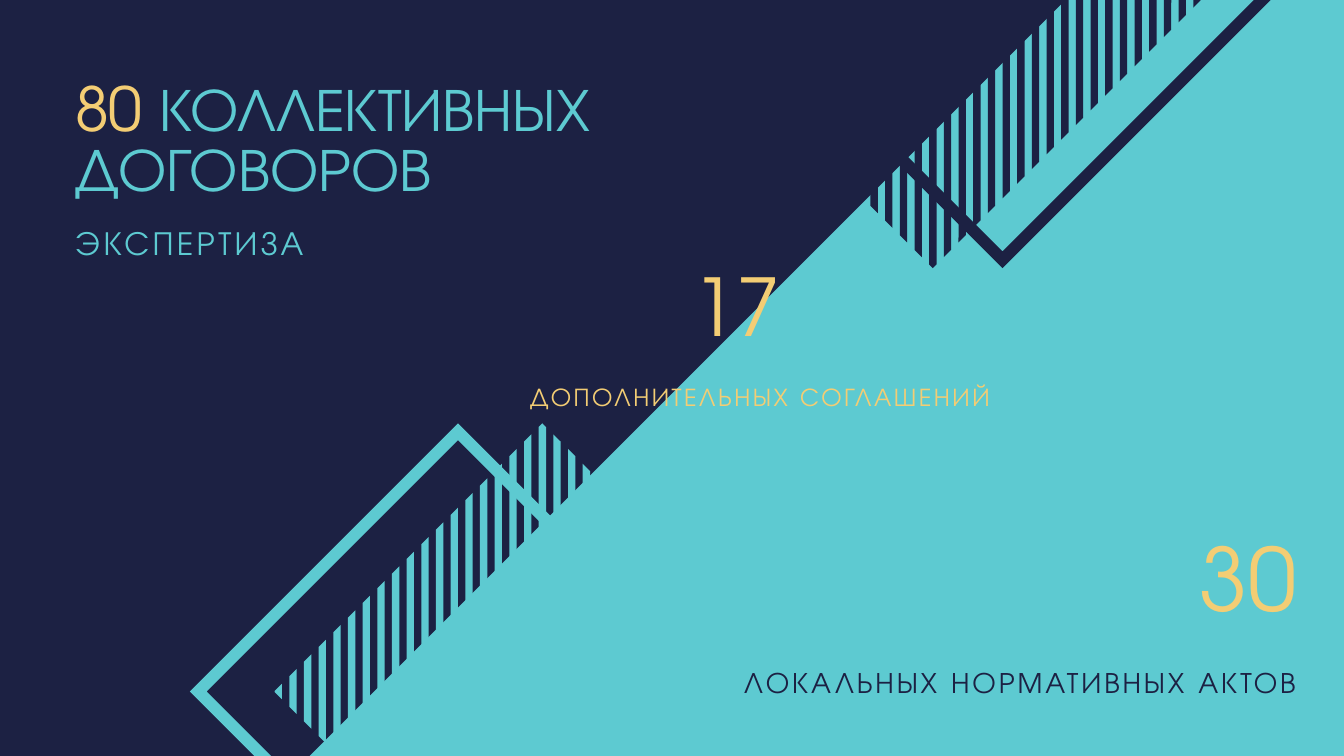
from dataclasses import dataclass
from math import sqrt

from pptx import Presentation
from pptx.dml.color import RGBColor
from pptx.enum.shapes import MSO_SHAPE
from pptx.enum.text import MSO_AUTO_SIZE, PP_ALIGN
from pptx.util import Pt


@dataclass(frozen=True)
class Theme:
    font: str = "TeX Gyre Adventor"
    navy: str = "1C2143"
    teal: str = "5DCAD1"
    gold: str = "F3CD74"
    title: float = 65
    sub: float = 36
    mid: float = 85.2
    mid_note: float = 27.4
    big: float = 93.1
    big_note: float = 31.6


THEME = Theme()
TILT = 315
HALF = 287.3    # centre to corner of a diamond
BAND = 18       # width of the frame, measured along the diagonal
STEP = 15.72    # from one stripe to the next
SIDE = 18       # stripes on each side of the middle one


def paint(shape, color):
    shape.fill.solid()
    shape.fill.fore_color.rgb = RGBColor.from_string(color)
    shape.line.fill.background()
    shape.shadow.inherit = False


def write(slide, box, runs, size, line, align=PP_ALIGN.LEFT, space=0):
    """Write one paragraph of (text, colour) runs; size, line and space in points."""
    shape = slide.shapes.add_textbox(*map(Pt, box))
    frame = shape.text_frame
    frame.margin_left = frame.margin_right = 0
    frame.margin_top = frame.margin_bottom = 0
    frame.word_wrap = True
    frame.auto_size = MSO_AUTO_SIZE.SHAPE_TO_FIT_TEXT
    para = frame.paragraphs[0]
    para.alignment = align
    para.line_spacing = Pt(line)
    for text, color in runs:
        run = para.add_run()
        run.text = text
        run.font.name = THEME.font
        run.font.size = Pt(size)
        run.font.color.rgb = RGBColor.from_string(color)
        if space:
            run.font._element.set("spc", str(round(space * 100)))


def outline(slide, center, loops, color):
    """Draw loops, given as offsets from center, as one tilted freeform."""
    left, top = center

    def turn(x, y):
        return Pt(left + (x - y) / sqrt(2)), Pt(top + (x + y) / sqrt(2))

    pen = None
    for loop in loops:
        first, *rest = [turn(x, y) for x, y in loop]
        if pen is None:
            pen = slide.shapes.build_freeform(*first)
        else:
            pen.move_to(*first)
        pen.add_line_segments(rest, close=True)
    shape = pen.convert_to_shape()
    shape.rotation = TILT
    paint(shape, color)


def frame(slide, center, color):
    loops = [[(-r, 0), (0, -r), (r, 0), (0, r)] for r in (HALF, HALF - BAND)]
    outline(slide, center, loops, color)


def stripes(slide, center, color):
    """Fill a diamond with upright stripes as wide as the gaps between them."""
    loops = []
    for i in range(-SIDE, SIDE + 1):
        mid = i * STEP
        edges = [mid - STEP / 4, mid + STEP / 4]
        if i == 0:
            edges.insert(1, 0)
        upper = [(x, abs(x) - HALF) for x in edges]
        loops.append(upper + [(x, -y) for x, y in reversed(upper)])
    outline(slide, center, loops, color)


def field(slide, box):
    shape = slide.shapes.add_shape(MSO_SHAPE.RECTANGLE, *map(Pt, box))
    shape.rotation = TILT
    paint(shape, THEME.teal)


def heading(slide, box):
    left, top, width, height = box
    write(slide, (left, top, width, 140),
          [("80 ", THEME.gold), ("КОЛЛЕКТИВНЫХ ДОГОВОРОВ", THEME.teal)],
          THEME.title, THEME.title)
    write(slide, (left, top + height - 43.2, width, 43.2),
          [("ЭКСПЕРТИЗА", THEME.teal)], THEME.sub, 43.2, space=3.6)


def figure(slide, box, number, note, sizes, color, align):
    """Place a large number at the top of the box and its note at the bottom."""
    left, top, width, height = box
    large, small = sizes
    deep = small * 1.2
    write(slide, (left, top, width, large * 1.12),
          [(number, THEME.gold)], large, large, align)
    write(slide, (left, top + height - deep, width, deep),
          [(note, color)], small, deep, PP_ALIGN.RIGHT, small / 10)


def main():
    deck = Presentation()
    deck.slide_width, deck.slide_height = Pt(1440), Pt(810)
    slide = deck.slides.add_slide(deck.slide_layouts[6])
    slide.background.fill.solid()
    slide.background.fill.fore_color.rgb = RGBColor.from_string(THEME.navy)

    frame(slide, (490.7, 740.9), THEME.teal)
    stripes(slide, (581.1, 740.9), THEME.teal)
    field(slide, (206.6, 277.2, 1657.4, 824.4))
    heading(slide, (80.6, 88.6, 802.8, 192.9))
    figure(slide, (517, 292.3, 543.6, 148.8), "17", "ДОПОЛНИТЕЛЬНЫХ СОГЛАШЕНИЙ",
           (THEME.mid, THEME.mid_note), THEME.gold, PP_ALIGN.CENTER)
    frame(slide, (1074.2, 0), THEME.navy)
    stripes(slide, (999.5, 0), THEME.navy)
    figure(slide, (732.2, 580.3, 656.6, 169), "30", "ЛОКАЛЬНЫХ НОРМАТИВНЫХ АКТОВ",
           (THEME.big, THEME.big_note), THEME.navy, PP_ALIGN.RIGHT)
    deck.save("out.pptx")


if __name__ == "__main__":
    main()
